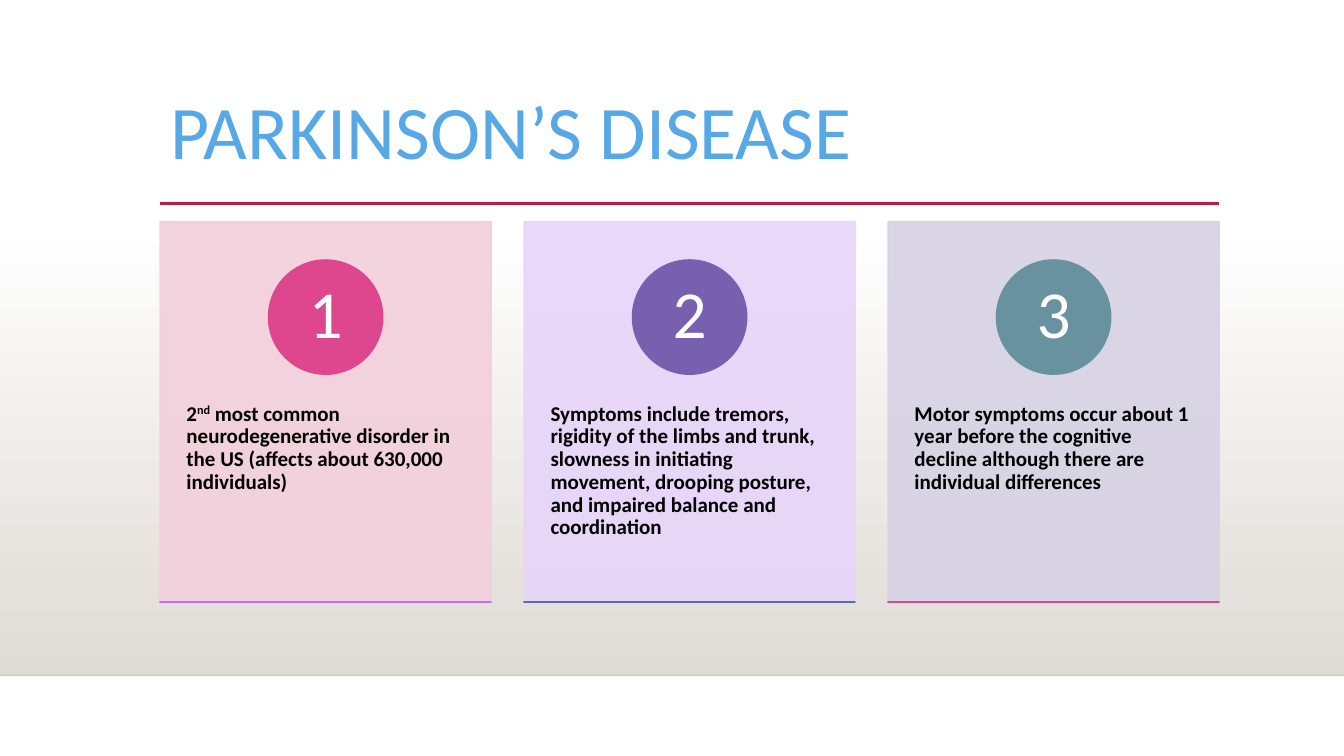
from lxml import etree
from pptx import Presentation
from pptx.dml.color import RGBColor
from pptx.enum import shapes, text
from pptx.oxml.ns import qn
from pptx.util import Pt

TITLE = "PARKINSON’S DISEASE"
# Each card: runs of (words, raised), then card, circle and base line colours
CARDS = [
    ([("2", False), ("nd", True),
      (" most common neurodegenerative disorder in the US "
       "(affects about 630,000 individuals)", False)],
     "rose", "pink", "orchid"),
    ([("Symptoms include tremors, rigidity of the limbs and trunk, slowness in "
       "initiating movement, drooping posture, and impaired balance and "
       "coordination", False)],
     "lilac", "purple", "blue"),
    ([("Motor symptoms occur about 1 year before the cognitive decline although "
       "there are individual differences", False)],
     "mist", "teal", "pink"),
]
HUES = {
    "white": "FFFFFF", "black": "000000", "sand": "DFDBD5", "sky": "56A8E7",
    "red": "B71E42", "rose": "F2CFDB", "lilac": "E7D5F9", "mist": "D7D2E3",
    "pink": "DE478E", "purple": "795FAF", "teal": "6892A0",
    "orchid": "BC72F0", "blue": "586EA6",
}
FONT = "Calibri"
WIDE, HIGH = 960, 540
LEFT, TOP = 114.5, 158.4
CARD_W, CARD_H, STEP = 236.2, 271.8, 260
DISC, DISC_TOP = 81.4, 185.8
BODY_TOP, BODY_H = 262.1, 162.7
FLOOR, RULE = 482.5, 145.4


def hue(name):
    return RGBColor.from_string(HUES[name])


def fade(fill, share):
    """Make a solid fill partly transparent; share is its opacity in percent."""
    color = fill._xPr.find(qn("a:solidFill"))[0]
    etree.SubElement(color, qn("a:alpha"), val=str(share * 1000))


def box(kind, x, y, w, h, name, share=100):
    shape = slide.shapes.add_shape(kind, Pt(x), Pt(y), Pt(w), Pt(h))
    shape.shadow.inherit = False
    shape.line.width = Pt(1.25)
    for fill in (shape.fill, shape.line.fill):
        fill.solid()
        fill.fore_color.rgb = hue(name)
        if share < 100:
            fade(fill, share)
    return shape


def rule(x1, x2, y, name, width):
    line = slide.shapes.add_connector(
        shapes.MSO_CONNECTOR.STRAIGHT, Pt(x1), Pt(y), Pt(x2), Pt(y))
    line.line.color.rgb = hue(name)
    line.line.width = Pt(width)
    etree.SubElement(line._element.spPr, qn("a:effectLst"))
    return line


def style(frame, size, name, align, anchor, pads, bold=False):
    frame.word_wrap = True
    frame.auto_size = text.MSO_AUTO_SIZE.NONE
    frame.vertical_anchor = anchor
    frame.margin_left = frame.margin_right = Pt(pads[0])
    frame.margin_top = frame.margin_bottom = Pt(pads[1])
    par = frame.paragraphs[0]
    par.alignment = align
    par.line_spacing = 0.9
    for run in par.runs:
        run.font.name = FONT
        run.font.size = Pt(size)
        run.font.bold = bold
        run.font.color.rgb = hue(name)


def card(num, x, runs, back, disc, base):
    rect = shapes.MSO_SHAPE.RECTANGLE
    box(rect, x, TOP, CARD_W, CARD_H, back, 90)

    body = slide.shapes.add_textbox(
        Pt(x), Pt(BODY_TOP), Pt(CARD_W), Pt(BODY_H)).text_frame
    for words, raised in runs:
        run = body.paragraphs[0].add_run()
        run.text = words
        if raised:
            run.font._element.set("baseline", "30000")
    style(body, 15, "black", text.PP_ALIGN.LEFT, text.MSO_ANCHOR.TOP,
          (18.7, 25.9), True)

    dot = box(shapes.MSO_SHAPE.OVAL, x + (CARD_W - DISC) / 2, DISC_TOP,
              DISC, DISC, disc)
    dot.text_frame.text = str(num)
    style(dot.text_frame, 48, "white", text.PP_ALIGN.CENTER,
          text.MSO_ANCHOR.MIDDLE, (0, 0))

    box(rect, x, TOP + CARD_H, CARD_W, 0, base)


deck = Presentation()
deck.slide_width, deck.slide_height = Pt(WIDE), Pt(HIGH)
slide = deck.slides.add_slide(deck.slide_layouts[5])

band = box(shapes.MSO_SHAPE.RECTANGLE, 0, 159, WIDE, FLOOR - 159, "sand")
band.line.fill.background()
band.fill.gradient()
band.fill.gradient_angle = 270
for stop, name in zip(band.fill.gradient_stops, ("white", "sand")):
    stop.color.rgb = hue(name)

fade(rule(0, WIDE, FLOOR, "black", 1).line.fill, 20)
rule(LEFT, 871, RULE, "red", 2.5)

title = slide.shapes.title
title.left, title.top = Pt(LEFT), Pt(62.6)
title.width, title.height = Pt(756), Pt(82.8)
title.text_frame.text = TITLE
style(title.text_frame, 54, "sky", text.PP_ALIGN.LEFT, text.MSO_ANCHOR.TOP,
      (7.2, 5))

for i, parts in enumerate(CARDS):
    card(i + 1, LEFT + i * STEP, *parts)

deck.save("out.pptx")
